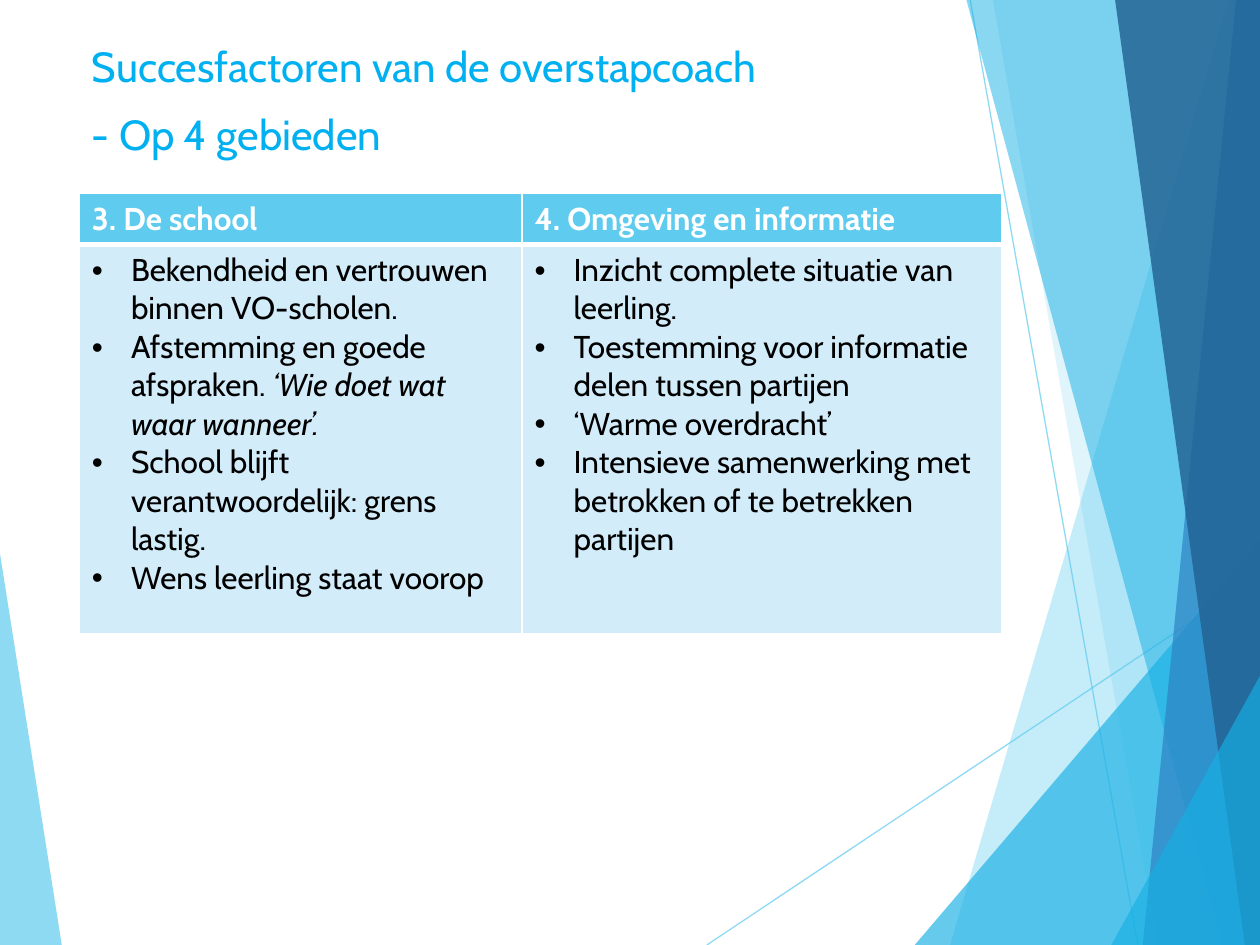
from dataclasses import dataclass
from typing import Any

import lxml.etree
import pptx
import pptx.dml.color
import pptx.enum.shapes
import pptx.enum.text
import pptx.oxml.ns
import pptx.util

Point = tuple[float, float]
WIDTH, HEIGHT = pptx.util.Inches(10), pptx.util.Inches(7.5)
SKY, CYAN, WHITE = "5FCBEF", "17B0E4", "FFFFFF"
LEFT, CONTENT_WIDTH = 6.3, 73.2
COLUMN_SHARES = (0.48, 0.52)
HEADER_HEIGHT, BODY_HEIGHT = 5.45, 41.2
INDENT = pptx.util.Inches(0.31)

TITLE_LINES = ("Succesfactoren van de overstapcoach", "- Op 4 gebieden")
TITLE_FONT = {"name": "Cabin", "size": pptx.util.Pt(24), "bold": False}
HEADER_FONT = {"name": "Cabin", "size": pptx.util.Pt(18), "bold": True}
BODY_FONT = {**HEADER_FONT, "bold": False}
TITLE_SPACING = {
    "line_spacing": 1.06,
    "space_before": pptx.util.Pt(0),
    "space_after": pptx.util.Pt(8),
    "alignment": pptx.enum.text.PP_ALIGN.LEFT,
}
TITLE_FRAME = {
    "word_wrap": True,
    "vertical_anchor": pptx.enum.text.MSO_ANCHOR.TOP,
    "auto_size": pptx.enum.text.MSO_AUTO_SIZE.SHAPE_TO_FIT_TEXT,
}


@dataclass(frozen=True)
class Facet:
    outline: list[Point]
    colour: str
    opacity: int


@dataclass(frozen=True)
class Ray:
    start: Point
    end: Point


@dataclass(frozen=True)
class Phrase:
    text: str
    italic: bool = False


@dataclass(frozen=True)
class Area:
    heading: str
    factors: list[list[Phrase]]


def band(top: float, foot: float) -> list[Point]:
    return [(top, 0), (foot, 100), (100, 100), (100, 0)]


def wedge(foot: float, peak: float, edge: float = 100) -> list[Point]:
    return [(foot, 100), (edge, peak), (edge, 100)]


LEFT_FACET = Facet(wedge(4.9, 58.6, 0), SKY, 70)
RAYS = [Ray((56.1, 100), (100, 60.95)), Ray((77, 0), (90.3, 100))]
RIGHT_FACETS = [
    Facet(band(97.5, 75.4), SKY, 36),
    Facet(band(78.8, 91.9), SKY, 20),
    Facet(wedge(72.6, 57.2), CYAN, 66),
    Facet(band(76.7, 97), CYAN, 50),
    Facet(band(98.1, 90.7), "2E83C3", 70),
    Facet(band(88.5, 98.8), "226292", 82),
    Facet(wedge(88.2, 71.5), CYAN, 66),
]
AREAS = [
    Area("3. De school", [
        [Phrase("Bekendheid en vertrouwen binnen VO-scholen.")],
        [Phrase("Afstemming en goede afspraken. "),
         Phrase("‘Wie doet wat waar wanneer’.", italic=True)],
        [Phrase("School blijft verantwoordelijk: grens lastig.")],
        [Phrase("Wens leerling staat voorop")],
    ]),
    Area("4. Omgeving en informatie", [
        [Phrase("Inzicht complete situatie van leerling.")],
        [Phrase("Toestemming voor informatie delen tussen partijen")],
        [Phrase("‘Warme overdracht’")],
        [Phrase("Intensieve samenwerking met betrokken of te betrekken partijen")],
    ]),
]


def across(percent: float) -> int:
    return round(WIDTH * percent / 100)


def down(percent: float) -> int:
    return round(HEIGHT * percent / 100)


def place(point: Point) -> tuple[int, int]:
    return across(point[0]), down(point[1])


def apply(target: Any, values: dict[str, Any]) -> None:
    for name, value in values.items():
        setattr(target, name, value)


def paint(fill: Any, colour: str) -> None:
    fill.solid()
    fill.fore_color.rgb = pptx.dml.color.RGBColor.from_string(colour)


def child(parent: Any, tag: str, **attributes: str) -> Any:
    return lxml.etree.SubElement(parent, pptx.oxml.ns.qn(tag), attributes)


def fade(shape: Any, opacity: int) -> None:
    for colour in shape._element.spPr.iter(pptx.oxml.ns.qn("a:srgbClr")):
        child(colour, "a:alpha", val=str(opacity * 1000))


def write(paragraph: Any, phrase: Phrase, font: dict[str, Any], colour: str) -> None:
    run = paragraph.add_run()
    run.text = phrase.text
    apply(run.font, {**font, "italic": phrase.italic})
    paint(run.font.fill, colour)


def next_paragraph(frame: Any, index: int) -> Any:
    return frame.add_paragraph() if index else frame.paragraphs[0]


def draw_facet(slide: Any, facet: Facet) -> None:
    start, *others = [place(point) for point in facet.outline]
    builder = slide.shapes.build_freeform(*start)
    builder.add_line_segments(others)
    shape = builder.convert_to_shape()
    shape.shadow.inherit = False
    paint(shape.fill, facet.colour)
    shape.line.fill.background()
    fade(shape, facet.opacity)


def draw_ray(slide: Any, ray: Ray) -> None:
    line = slide.shapes.add_connector(
        pptx.enum.shapes.MSO_CONNECTOR.STRAIGHT, *place(ray.start), *place(ray.end))
    line.line.width = pptx.util.Pt(0.75)
    paint(line.line.fill, SKY)
    fade(line, 70)
    child(line._element.spPr, "a:effectLst")


def draw_title(slide: Any) -> None:
    title = slide.shapes.title
    apply(title, {"left": across(LEFT), "top": down(3.33),
                  "width": across(CONTENT_WIDTH), "height": down(13.87)})
    apply(title.text_frame, TITLE_FRAME)
    for index, text in enumerate(TITLE_LINES):
        paragraph = next_paragraph(title.text_frame, index)
        apply(paragraph, TITLE_SPACING)
        write(paragraph, Phrase(text), TITLE_FONT, "00B0F0")


def format_cell(cell: Any, colour: str, borders: dict[str, float]) -> None:
    properties = cell._tc.get_or_add_tcPr()
    for side, points in borders.items():
        border = child(properties, f"a:ln{side}", w=str(pptx.util.Pt(points)))
        child(child(border, "a:solidFill"), "a:srgbClr", val=WHITE)
    paint(cell.fill, colour)


def add_bullet(paragraph: Any) -> None:
    properties = paragraph._p.get_or_add_pPr()
    properties.set("marL", str(INDENT))
    properties.set("indent", str(-INDENT))
    child(properties, "a:buFont", typeface="Arial")
    child(properties, "a:buChar", char="•")


def draw_areas(slide: Any) -> None:
    table = slide.shapes.add_table(
        2, len(AREAS), across(LEFT), down(20.45),
        across(CONTENT_WIDTH), down(HEADER_HEIGHT + BODY_HEIGHT)).table
    for row, height in zip(table.rows, (HEADER_HEIGHT, BODY_HEIGHT)):
        row.height = down(height)
    for column, (area, share) in enumerate(zip(AREAS, COLUMN_SHARES)):
        table.columns[column].width = across(CONTENT_WIDTH * share)
        heading, body = table.cell(0, column), table.cell(1, column)
        format_cell(heading, SKY, {"L": 1, "R": 1, "T": 1, "B": 3})
        format_cell(body, "D2ECF9", {"L": 1, "R": 1, "T": 3, "B": 1})
        write(heading.text_frame.paragraphs[0], Phrase(area.heading), HEADER_FONT, WHITE)
        for index, factor in enumerate(area.factors):
            paragraph = next_paragraph(body.text_frame, index)
            add_bullet(paragraph)
            for phrase in factor:
                write(paragraph, phrase, BODY_FONT, "000000")


def main() -> None:
    deck = pptx.Presentation()
    apply(deck, {"slide_width": WIDTH, "slide_height": HEIGHT})
    slide = deck.slides.add_slide(deck.slide_layouts[5])
    draw_facet(slide, LEFT_FACET)
    for ray in RAYS:
        draw_ray(slide, ray)
    for facet in RIGHT_FACETS:
        draw_facet(slide, facet)
    draw_title(slide)
    draw_areas(slide)
    deck.save("out.pptx")


if __name__ == "__main__":
    main()
